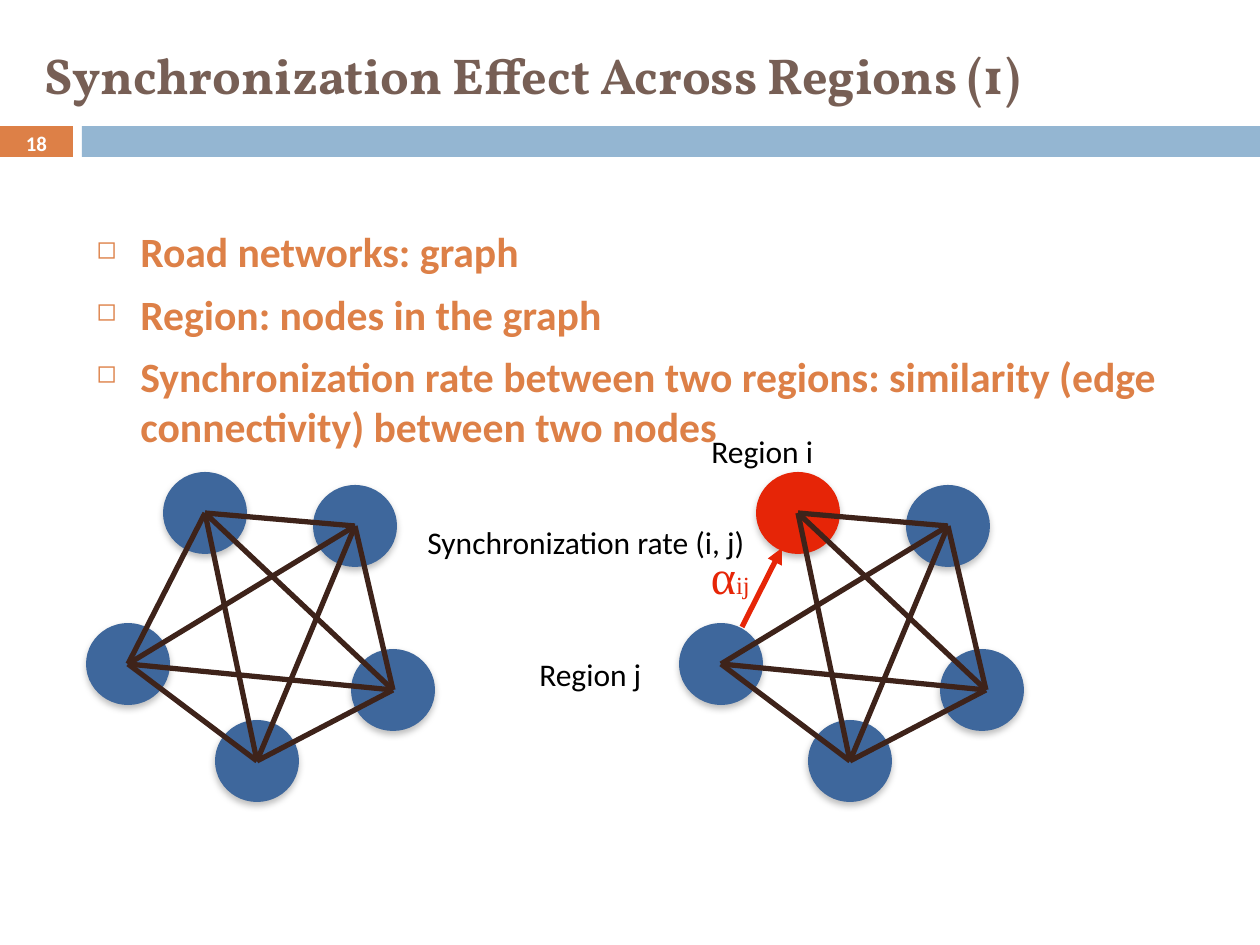
from itertools import combinations
from lxml.etree import SubElement
from pptx import Presentation
from pptx.dml.color import RGBColor
from pptx.enum.shapes import MSO_CONNECTOR as Connector, MSO_SHAPE as Shape
from pptx.enum.text import MSO_ANCHOR as Anchor, MSO_AUTO_SIZE as AutoSize, PP_ALIGN as Align
from pptx.oxml.ns import qn
from pptx.util import Emu, Pt

PX = 914400 // 126
ORANGE, BAR, BLUE, RED, BROWN = "DD8047", "94B6D2", "3E679C", "E62507", "3E231A"

TITLE = "Synchronization Effect Across Regions (1)"
BULLETS = [
    "Road networks: graph",
    "Region: nodes in the graph",
    "Synchronization rate between two regions: similarity (edge connectivity) between two nodes",
]
LABELS = [  # text, box
    ("Region i", (699, 426, 129, 50)),
    ("Region j", (527, 649, 129, 50)),
    ("Synchronization rate (i, j)", (415, 517, 348, 50)),
]

# Node centres of the left graph; the right graph repeats them further along
NODES = {"i": (205, 513), "j": (128, 664), "top": (355, 526),
         "bottom": (257, 761), "right": (393, 690)}
NODE_SIZE = (84, 82)
NO_EDGES = [{"top", "top"}]
GRAPHS = [  # x offset, node colours, node shifts, missing edges
    (0, {}, {}, []),
    (593, {"i": RED}, {"right": -4}, [("i", "j")]),
]
ARROW = ((742, 627), (782, 548))


def px(*values):
    return [Emu(value * PX) for value in values]


def color(text):
    return RGBColor.from_string(text)


def set_font(font, size, hex_color, name="Calibri", bold=False):
    font.size, font.name, font.bold = Pt(size), name, bold
    font.color.rgb = color(hex_color)


def add_shape(kind, box, fill):
    shape = slide.shapes.add_shape(kind, *px(*box))
    shape.shadow.inherit = False
    shape.fill.solid()
    shape.fill.fore_color.rgb = color(fill)
    shape.line.fill.background()
    return shape


def add_text(box, text="", wrap=True, anchor=Anchor.TOP):
    frame = slide.shapes.add_textbox(*px(*box)).text_frame
    frame.word_wrap = wrap
    frame.auto_size = AutoSize.NONE if wrap else AutoSize.SHAPE_TO_FIT_TEXT
    frame.vertical_anchor = anchor
    frame.text = text
    return frame


def add_line(start, end, hex_color, arrow=False):
    line = slide.shapes.add_connector(Connector.STRAIGHT, *px(*start, *end))
    line.line.color.rgb = color(hex_color)
    line.line.width = Pt(3)
    if arrow:
        SubElement(line.line._get_or_add_ln(), qn("a:tailEnd"), type="triangle")
    SubElement(line._element.spPr, qn("a:effectLst"))


def add_node(x, y, fill):
    width, height = NODE_SIZE
    node = add_shape(Shape.OVAL, (x - width // 2, y - height // 2, width, height), fill)
    effects = node._element.spPr.find(qn("a:effectLst"))
    shadow = SubElement(effects, qn("a:outerShdw"), blurRad=str(Pt(4)), dist=str(Pt(2)),
                        dir="5400000", rotWithShape="0")
    black = SubElement(shadow, qn("a:srgbClr"), val="000000")
    SubElement(black, qn("a:alpha"), val="25000")


def add_bullet(paragraph):
    properties = paragraph._p.get_or_add_pPr()
    properties.set("marL", str(44 * PX))
    properties.set("indent", str(-44 * PX))
    bullet_color = SubElement(properties, qn("a:buClr"))
    SubElement(bullet_color, qn("a:srgbClr"), val=ORANGE)
    SubElement(properties, qn("a:buSzPct"), val="60000")
    SubElement(properties, qn("a:buChar"), char="◻")


presentation = Presentation()
presentation.slide_width, presentation.slide_height = px(1260, 945)
slide = presentation.slides.add_slide(presentation.slide_layouts[6])

# Header bars, slide number and title
add_shape(Shape.RECTANGLE, (0, 126, 73, 31), ORANGE)
add_shape(Shape.RECTANGLE, (82, 126, 1178, 31), BAR)
number = add_text((0, 126, 73, 34), "18", anchor=Anchor.MIDDLE).paragraphs[0]
number.alignment = Align.CENTER
set_font(number.font, 11.9, "FFFFFF", bold=True)
title = add_text((32, 32, 1061, 84), TITLE, anchor=Anchor.MIDDLE).paragraphs[0]
set_font(title.font, 28.8, "775F55", "Vollkorn", bold=True)

# Bullets
body = add_text((84, 220, 1154, 210), "\n".join(BULLETS))
for index, paragraph in enumerate(body.paragraphs):
    add_bullet(paragraph)
    paragraph.space_before = Pt(7 if index else 0)
    set_font(paragraph.font, 23.8, ORANGE, bold=True)

# Graphs: every pair of nodes is joined, apart from the missing edges
for offset, fills, shifts, missing in GRAPHS:
    centers = {name: (x + offset, y) for name, (x, y) in NODES.items()}
    for name, (x, y) in centers.items():
        add_node(x + shifts.get(name, 0), y, fills.get(name, BLUE))
    for pair in combinations(NODES, 2):
        if pair not in missing:
            add_line(*(centers[name] for name in pair), BROWN)

# Synchronization arrow and its symbol
add_line(*ARROW, RED, arrow=True)
symbol = add_text((706, 566, 49, 39), wrap=False, anchor=Anchor.BOTTOM)
symbol.margin_left = symbol.margin_right = symbol.margin_top = symbol.margin_bottom = Emu(5 * PX)
symbol.paragraphs[0].line_spacing = 0.5
for text, size in [("α", 27.4), ("ij", 14.1)]:
    run = symbol.paragraphs[0].add_run()
    run.text = text
    set_font(run.font, size, RED, "Times New Roman")

# Labels
for text, box in LABELS:
    label = add_text(box, text, wrap=False).paragraphs[0]
    set_font(label.font, 18, "000000")

presentation.save("out.pptx")
